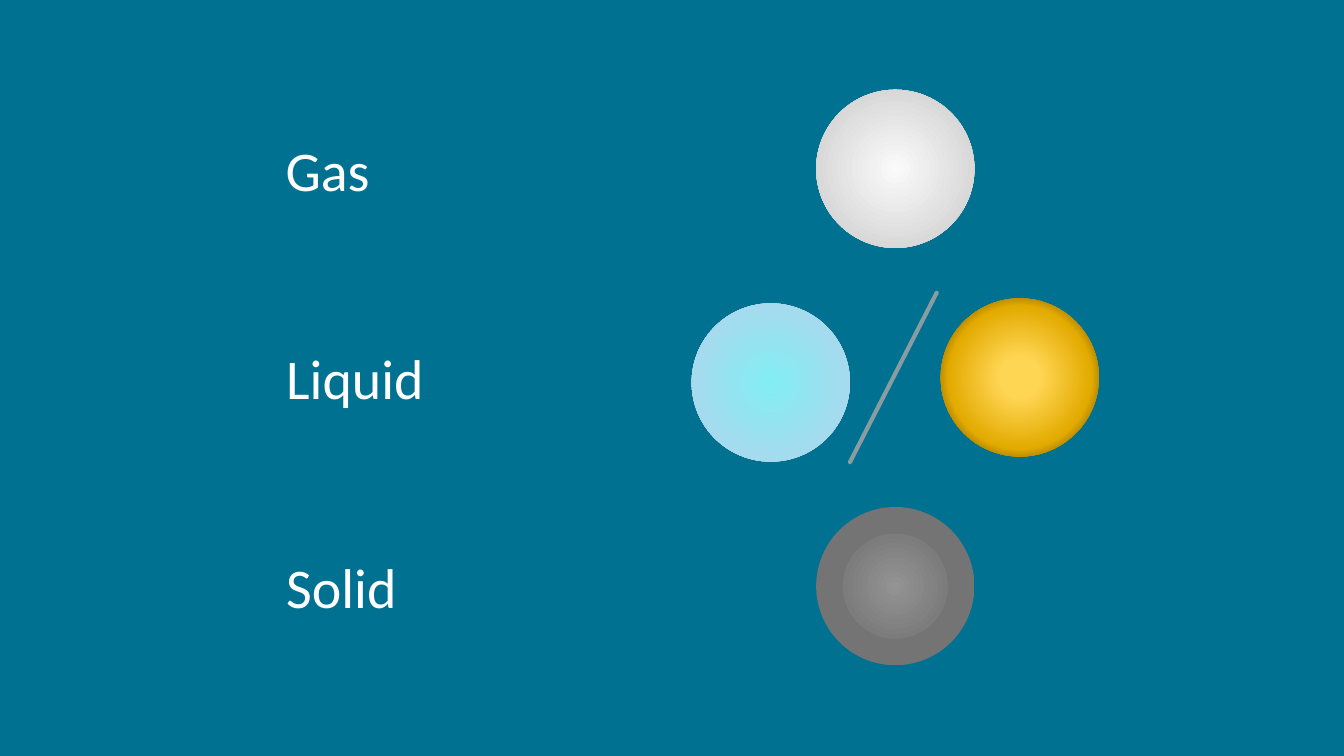
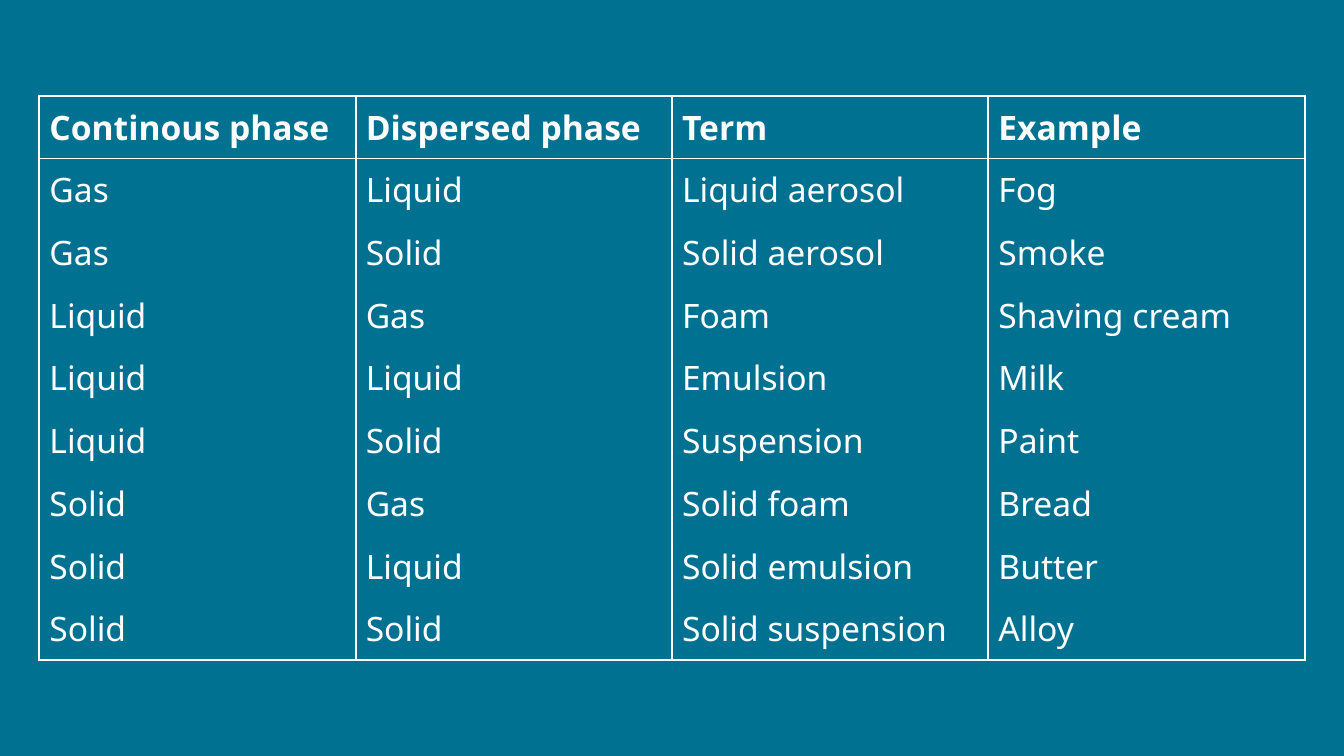
from lxml.etree import SubElement
from pptx import Presentation
from pptx.dml.color import RGBColor
from pptx.enum.shapes import MSO_CONNECTOR as CONN, MSO_SHAPE as SHAPE
from pptx.enum.text import MSO_ANCHOR as ANCHOR, MSO_AUTO_SIZE as AUTO, PP_ALIGN as ALIGN
from pptx.oxml.ns import qn
from pptx.util import Inches, Pt

SLIDE_W, SLIDE_H = 13.33, 7.5
BACK, WHITE, SLASH = "007191", "FFFFFF", "A6A6A6"
LABEL = {"size": Pt(40), "name": "Calibri", "bold": False}
BODY = {"size": Pt(24), "name": "Noto Sans", "bold": False}
HEAD = {**BODY, "bold": True}
NO_GRID = "{2D5ABB26-0587-4C30-8999-92F81FD0307C}"
BORDER = 1.5
BALL = 1.57

GAS = [(0, "FAFAFA"), (74, "D7D7D7"), (83, "D7D7D7"), (100, "E4E4E4")]
WATER = [(0, "82EDF3"), (100, "B5D2EC"), (100, "B5D2EC"), (100, "CEE1F2")]
OIL = [(18, "FFD554"), (64, "E3AB00"), (71, "BF9000"), (100, "B28600")]
SOLID = [(0, "727272"), (0, "939393"), (47, "7C7C7C"), (47, "747474")]

PHASES = [
    ("Gas", 1.04, [(1, 0, GAS)], False),
    ("Liquid", 1.58, [(2, 0, OIL), (0, 0.05, WATER)], True),
    ("Solid", 1.31, [(1, 0, SOLID)], False),
]

TABLE = [
    ("Continous phase", "Dispersed phase", "Term", "Example"),
    ("Gas", "Liquid", "Liquid aerosol", "Fog"),
    ("Gas", "Solid", "Solid aerosol", "Smoke"),
    ("Liquid", "Gas", "Foam", "Shaving cream"),
    ("Liquid", "Liquid", "Emulsion", "Milk"),
    ("Liquid", "Solid", "Suspension", "Paint"),
    ("Solid", "Gas", "Solid foam", "Bread"),
    ("Solid", "Liquid", "Solid emulsion", "Butter"),
    ("Solid", "Solid", "Solid suspension", "Alloy"),
]


def rgb(color):
    return RGBColor.from_string(color)


def inches(*lengths):
    return [Inches(v) for v in lengths]


def new_slide(prs):
    s = prs.slides.add_slide(prs.slide_layouts[6])
    fill = s.background.fill
    fill.solid()
    fill.fore_color.rgb = rgb(BACK)
    return s


def write(tf, text, style, align):
    p = tf.paragraphs[0]
    p.alignment = align
    r = p.add_run()
    r.text = text
    for key, value in style.items():
        setattr(r.font, key, value)
    r.font.color.rgb = rgb(WHITE)


def radial_fill(sp, stops):
    sp.fill.background()
    spPr = sp.element.spPr
    grad = SubElement(spPr, qn("a:gradFill"), rotWithShape="1")
    spPr.replace(spPr.find(qn("a:noFill")), grad)
    stop_list = SubElement(grad, qn("a:gsLst"))
    for pos, color in stops:
        stop = SubElement(stop_list, qn("a:gs"), pos=str(pos * 1000))
        SubElement(stop, qn("a:srgbClr"), val=color)
    circle = SubElement(grad, qn("a:path"), path="circle")
    SubElement(circle, qn("a:fillToRect"), l="50000", t="50000", r="50000", b="50000")


def add_ball(shapes, x, y, stops):
    sp = shapes.add_shape(SHAPE.OVAL, *inches(x, y, BALL, BALL))
    sp.shadow.inherit = False
    radial_fill(sp, stops)
    sp.line.fill.background()


def add_label(shapes, x, middle, w, text):
    h = 0.77
    tf = shapes.add_textbox(*inches(x, middle - h / 2, w, h)).text_frame
    tf.word_wrap = False
    tf.auto_size = AUTO.SHAPE_TO_FIT_TEXT
    tf.vertical_anchor = ANCHOR.MIDDLE
    write(tf, text, LABEL, ALIGN.CENTER)


def add_slash(shapes, x, middle):
    dx, dy = 0.43, 0.84
    line = shapes.add_connector(CONN.STRAIGHT, *inches(x + dx, middle - dy, x - dx, middle + dy))
    line.line.color.rgb = rgb(SLASH)
    line.line.width = Pt(3)
    ln = line.line._ln
    ln.set("cap", "rnd")
    SubElement(ln.find(".//" + qn("a:srgbClr")), qn("a:alpha"), val="81000")
    SubElement(line.element.spPr, qn("a:effectLst"))


def phase_row(s, box, text, label_w, balls, slash):
    x, y, w, h = box
    middle = y + h / 2
    pitch = 1.235
    first = x + w - BALL - 2 * pitch
    shapes = s.shapes.add_group_shape().shapes
    for col, drop, stops in balls:
        add_ball(shapes, first + col * pitch, middle - BALL / 2 + drop, stops)
    if slash:
        add_slash(shapes, first + pitch + BALL / 2 - 0.02, middle)
    add_label(shapes, x, middle, label_w, text)


def phases_slide(prs, box):
    s = new_slide(prs)
    x, y, w, h = box
    row_h = h / len(PHASES)
    for i, phase in enumerate(PHASES):
        phase_row(s, (x, y + i * row_h, w, row_h), *phase)


def set_borders(cell, sides):
    tcPr = cell._tc.get_or_add_tcPr()
    for side in "LRTB":
        ln = SubElement(tcPr, qn("a:ln" + side), w=str(Pt(BORDER)))
        if side in sides:
            SubElement(SubElement(ln, qn("a:solidFill")), qn("a:srgbClr"), val=WHITE)
        else:
            SubElement(ln, qn("a:noFill"))


def table_slide(prs, box):
    s = new_slide(prs)
    rows, cols = len(TABLE), len(TABLE[0])
    frame = s.shapes.add_table(rows, cols, *inches(*box))
    table = frame.table
    table.first_row = table.horz_banding = False
    table._tbl.tblPr.find(qn("a:tableStyleId")).text = NO_GRID
    for col in table.columns:
        col.width = Inches(box[2] / cols)
    for i, texts in enumerate(TABLE):
        table.rows[i].height = Inches(box[3] / rows)
        sides = "LR" + ("T" if i < 2 else "") + ("B" if i in (0, rows - 1) else "")
        for j, text in enumerate(texts):
            cell = table.cell(i, j)
            cell.vertical_anchor = ANCHOR.MIDDLE
            set_borders(cell, sides)
            cell.fill.background()
            write(cell.text_frame, text, BODY if i else HEAD, ALIGN.LEFT)


def main():
    prs = Presentation()
    prs.slide_width, prs.slide_height = inches(SLIDE_W, SLIDE_H)
    phases_slide(prs, (2.73, 0.64, 8.17, 6.21))
    table_slide(prs, (0.39, 0.95, 12.55, 5.6))
    prs.save("out.pptx")


if __name__ == "__main__":
    main()
